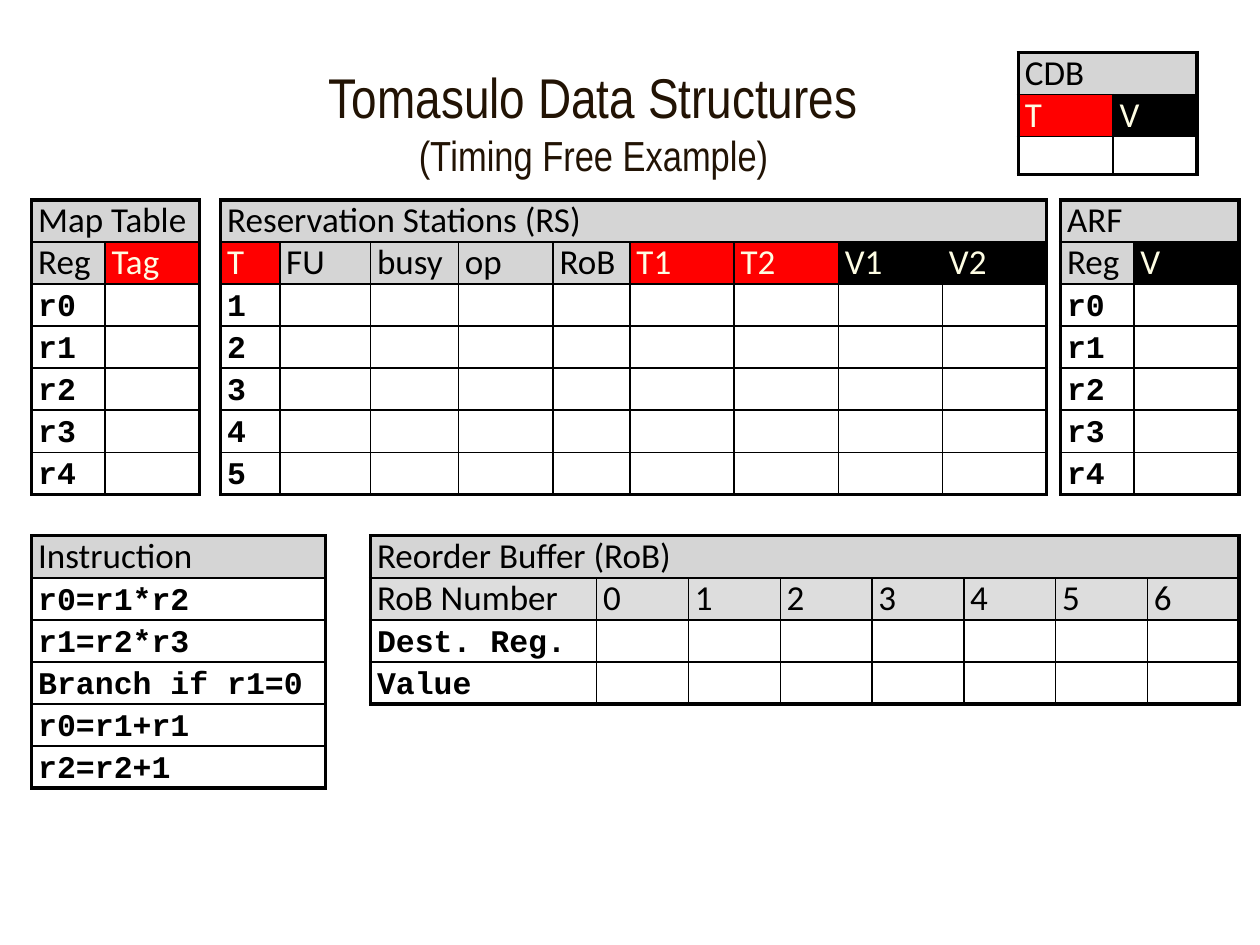
"""Build a slide of the empty data structures used in Tomasulo's algorithm."""
from dataclasses import dataclass

from lxml.etree import SubElement
from pptx import Presentation
from pptx.dml.color import RGBColor
from pptx.enum.text import MSO_ANCHOR, PP_ALIGN
from pptx.oxml.ns import qn
from pptx.util import Cm, Pt


@dataclass(frozen=True)
class Theme:
    ink: str = "000000"
    title: str = "221304"
    header: str = "D5D5D5"
    buffer_header: str = "DDDDDD"
    tag: str = "FF0000"
    value: str = "000000"
    light: str = "FEFDE3"
    title_size: float = 32
    subtitle_size: float = 24
    header_size: float = 20
    code_size: float = 18
    line_pitch: float = 24
    outer_line: float = 2.25
    inner_line: float = 1


def set_font(font, name, size, color, bold=False):
    font.name = name
    font.size = Pt(size)
    font.bold = bold
    font.color.rgb = RGBColor.from_string(color)


def add_borders(cell, outer_sides):
    for side in "LRTB":
        width = theme.outer_line if side in outer_sides else theme.inner_line
        line = SubElement(cell._tc.get_or_add_tcPr(), qn(f"a:ln{side}"), w=str(Pt(width)))
        fill = SubElement(line, qn("a:solidFill"))
        SubElement(fill, qn("a:srgbClr"), val=theme.ink)


theme = Theme()
deck = Presentation()
deck.slide_width, deck.slide_height = Cm(25.4), Cm(19.05)
page = deck.slides.add_slide(deck.slide_layouts[6])

title_box = page.shapes.add_textbox(Cm(0.85), Cm(1.49), Cm(22.23), Cm(1.9))
frame = title_box.text_frame
frame.word_wrap = True
frame.vertical_anchor = MSO_ANCHOR.MIDDLE
para = frame.paragraphs[0]
para.alignment = PP_ALIGN.CENTER
for text, size in [
    ("Tomasulo Data Structures", theme.title_size),
    ("(Timing Free Example)", theme.subtitle_size),
]:
    if para.runs:
        para.add_line_break()
    span = para.add_run()
    span.text = text
    set_font(span.font, "Arial Narrow", size, theme.title)

registers = [[f"r{number}"] for number in range(5)]
stations = [[str(number)] for number in range(1, 6)]
station_labels = ["T", "FU", "busy", "op", "RoB", "T1", "T2", "V1", "V2"]
instructions = [["r0=r1*r2"], ["r1=r2*r3"], ["Branch if r1=0"], ["r0=r1+r1"], ["r2=r2+1"]]
buffer_labels = ["RoB Number", *map(str, range(7))]
tag_labels = {"Tag", "T", "T1", "T2"}
value_labels = {"V", "V1", "V2"}

tables = [
    ("Map Table", 0.64, 4.03, [1.48, 1.9], ["Reg", "Tag"], registers, theme.header),
    ("Reservation Stations (RS)", 4.45, 4.03, [1.19, 1.83, 1.77, 1.91, 1.55] + [2.1] * 4,
     station_labels, stations, theme.header),
    ("CDB", 20.53, 1.06, [1.91, 1.69], ["T", "V"], [[]], theme.header),
    ("ARF", 21.38, 4.03, [1.48, 2.12], ["Reg", "V"], registers, theme.header),
    ("Instruction", 0.64, 10.8, [5.92], [], instructions, theme.header),
    ("Reorder Buffer (RoB)", 7.47, 10.8, [4.56] + [1.85] * 7,
     buffer_labels, [["Dest. Reg."], ["Value"]], theme.buffer_header),
]

for name, left, top, widths, labels, body, label_fill in tables:
    headers = [[name], labels] if labels else [[name]]
    rows = headers + body
    heights = [0.84 if row else 0.69 for row in rows]
    table = page.shapes.add_table(
        len(rows), len(widths), Cm(left), Cm(top), Cm(sum(widths)), Cm(sum(heights))
    ).table
    table.first_row = table.horz_banding = False
    for column, width in zip(table.columns, widths):
        column.width = Cm(width)
    for row, height in zip(table.rows, heights):
        row.height = Cm(height)
    if len(widths) > 1:
        table.cell(0, 0).merge(table.cell(0, len(widths) - 1))

    for row_index, row in enumerate(rows):
        for column_index in range(len(widths)):
            cell = table.cell(row_index, column_index)
            if cell.is_spanned:
                continue
            edges = {
                "L": column_index == 0,
                "R": row_index == 0 or column_index == len(widths) - 1,
                "T": row_index == 0,
                "B": row_index == len(rows) - 1,
            }
            add_borders(cell, [side for side, is_outer in edges.items() if is_outer])
            cell.margin_left = Cm(0.13)
            cell.margin_right = cell.margin_top = cell.margin_bottom = 0
            para = cell.text_frame.paragraphs[0]
            text = row[column_index] if column_index < len(row) else ""
            if text:
                para.text = text
                para.line_spacing = Pt(theme.line_pitch)
            if row_index >= len(headers):
                cell.fill.background()
                set_font(para.font, "Courier New", theme.code_size, theme.ink, bold=True)
                continue
            cell.fill.solid()
            fill, color = (label_fill if row_index else theme.header), theme.ink
            if text in tag_labels:
                fill, color = theme.tag, theme.light
            elif text in value_labels:
                fill, color = theme.value, theme.light
            cell.fill.fore_color.rgb = RGBColor.from_string(fill)
            set_font(para.font, "Calibri", theme.header_size, color)

deck.save("out.pptx")
